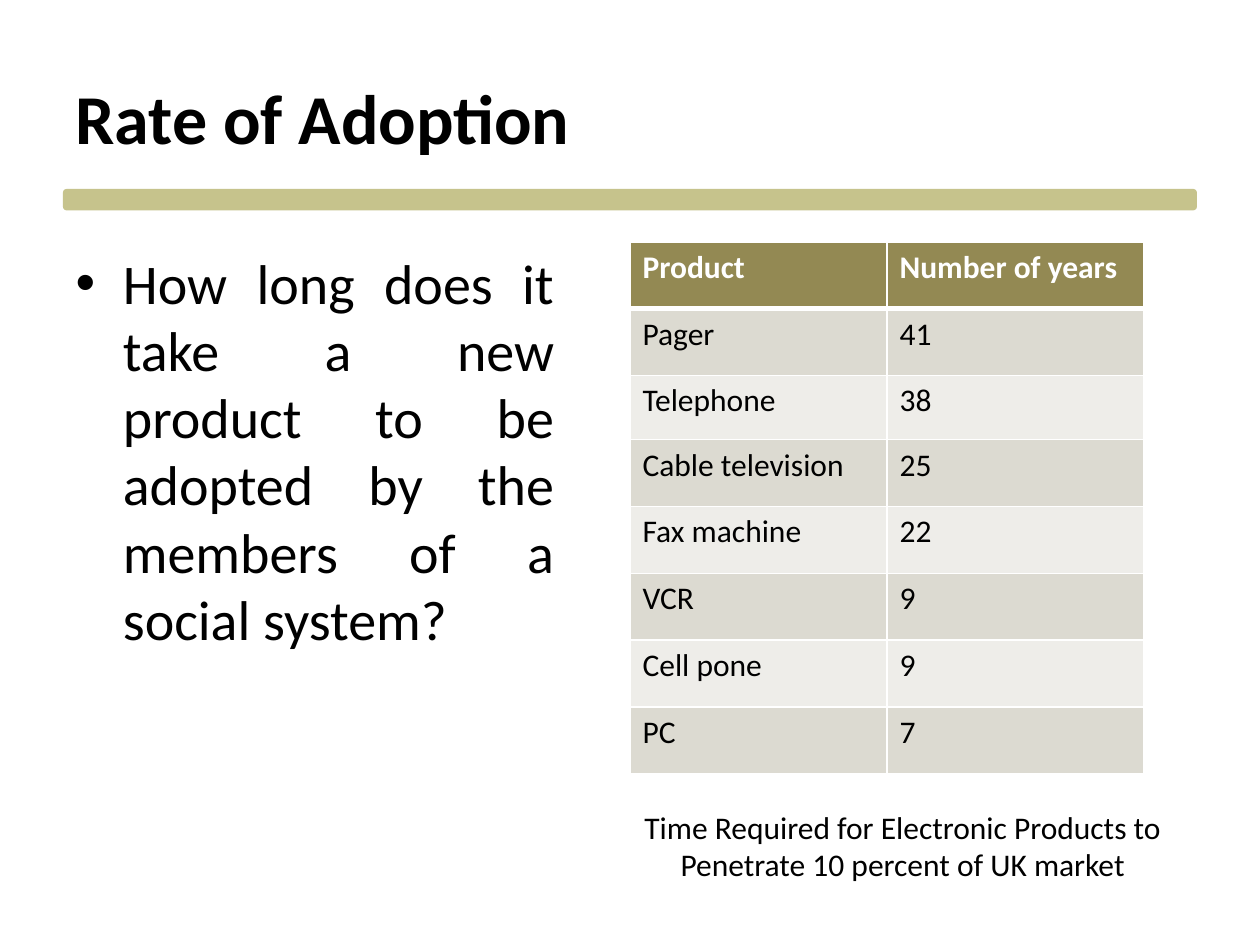
from lxml.etree import SubElement
from pptx import Presentation
from pptx.dml.color import RGBColor
from pptx.enum.shapes import MSO_SHAPE as Shape
from pptx.enum.text import MSO_ANCHOR as Anchor, MSO_AUTO_SIZE as AutoSize, PP_ALIGN as Align
from pptx.oxml.ns import qn
from pptx.util import Inches, Pt

ADOPTION_YEARS = [
    ("Product", "Number of years"),
    ("Pager", "41"),
    ("Telephone", "38"),
    ("Cable television", "25"),
    ("Fax machine", "22"),
    ("VCR", "9"),
    ("Cell pone", "9"),
    ("PC", "7"),
]


def rgb(value):
    return RGBColor.from_string(value)


def write(tf, text, size=18, color="000000", bold=False, align=None, font="Calibri"):
    p = tf.paragraphs[0]
    p.alignment = align
    r = p.add_run()
    r.text = text
    r.font.name, r.font.size, r.font.bold = font, Pt(size), bold
    r.font.color.rgb = rgb(color)


def set_borders(cell, color, **widths):
    """Draw cell borders; widths in points are keyed by side: L, R, T, B."""
    tcPr = cell._tc.get_or_add_tcPr()
    for side, width in widths.items():
        ln = SubElement(tcPr, qn(f"a:ln{side}"), w=str(Pt(width)))
        fill = SubElement(ln, qn("a:solidFill"))
        SubElement(fill, qn("a:srgbClr"), val=color)


class SlideBuilder:
    BAR = "C6C38C"
    HEADER = "938953"
    BANDS = ("EEEDE9", "DCDAD1")
    WHITE = "FFFFFF"

    def __init__(self, prs):
        self.s = prs.slides.add_slide(prs.slide_layouts[1])

    def placeholder(self, index, text, box, anchor, **fmt):
        sp = self.s.placeholders[index]
        sp.left, sp.top, sp.width, sp.height = map(Inches, box)
        tf = sp.text_frame
        tf.auto_size = AutoSize.NONE
        tf.vertical_anchor = anchor
        write(tf, text, **fmt)

    def bar(self, box):
        sp = self.s.shapes.add_shape(Shape.ROUNDED_RECTANGLE, *map(Inches, box))
        sp.shadow.inherit = False
        sp.fill.solid()
        sp.fill.fore_color.rgb = rgb(self.BAR)
        sp.line.fill.background()

    def text(self, text, box, **fmt):
        tf = self.s.shapes.add_textbox(*map(Inches, box)).text_frame
        tf.word_wrap = True
        tf.vertical_anchor = Anchor.MIDDLE
        write(tf, text, **fmt)

    def table(self, rows, box):
        frame = self.s.shapes.add_table(len(rows), len(rows[0]), *map(Inches, box))
        table = frame.table
        for i, row in enumerate(rows):
            table.rows[i].height = Inches(0.51 if i == 2 else 0.53)
            header = i == 0
            for j, value in enumerate(row):
                cell = table.cell(i, j)
                write(cell.text_frame, value, bold=header,
                      color=self.WHITE if header else "000000")
                set_borders(cell, self.WHITE, L=1, R=1,
                            T=3 if i == 1 else 1, B=3 if header else 1)
                cell.fill.solid()
                cell.fill.fore_color.rgb = rgb(self.HEADER if header else self.BANDS[i % 2])


def main():
    prs = Presentation()
    prs.slide_width, prs.slide_height = Inches(10), Inches(7.5)
    slide = SlideBuilder(prs)
    slide.bar((0.5, 1.5, 9, 0.17))
    slide.placeholder(0, "Rate of Adoption", (0.5, 0.3, 9, 1.25), Anchor.MIDDLE,
                      size=40, bold=True, align=Align.LEFT)
    slide.placeholder(1, "How long does it take a new product to be adopted "
                      "by the members of a social system?",
                      (0.5, 1.92, 4, 4.78), Anchor.TOP, size=32, align=Align.JUSTIFY)
    slide.table(ADOPTION_YEARS, (5, 1.92, 4.08, 4.25))
    slide.text("Time Required for Electronic Products to Penetrate 10 percent of UK market",
               (4.75, 6.17, 4.83, 1.08), align=Align.CENTER)
    prs.save("out.pptx")


if __name__ == "__main__":
    main()
